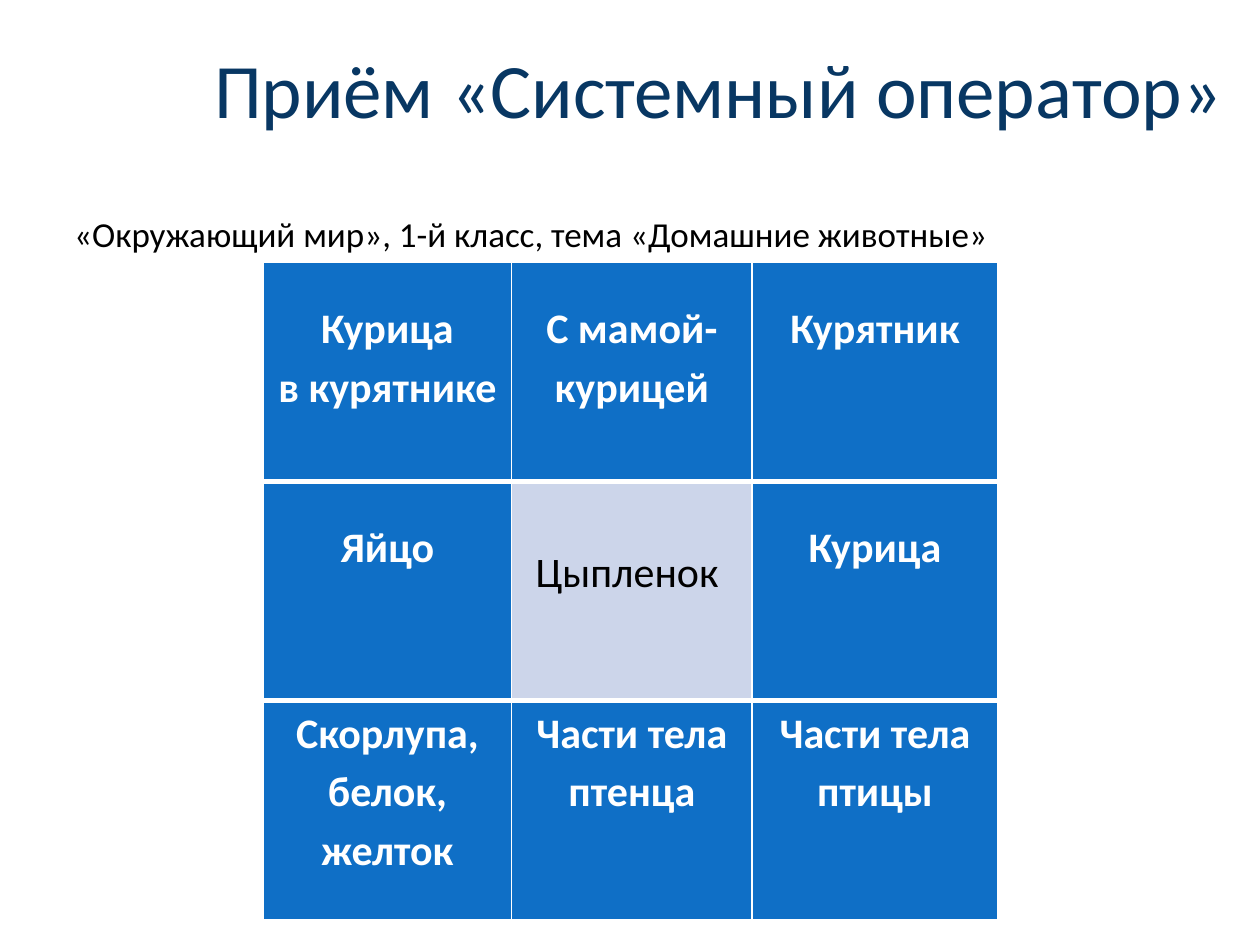
import pptx
import pptx.dml.color
import pptx.enum.text
import pptx.oxml.ns
import pptx.util
from dataclasses import dataclass
from lxml import etree
from pptx.util import Inches


@dataclass(frozen=True)
class Theme:
    font: str = "Calibri"
    title_color: str = "083763"
    text_color: str = "000000"
    cell_text: str = "FFFFFF"
    cell_fill: str = "0F6FC6"
    center_fill: str = "CCD5EA"
    border: str = "FFFFFF"
    title_size: int = 44
    subtitle_size: int = 20
    cell_size: int = 24
    thin: int = 1
    thick: int = 3


THEME = Theme()
TITLE = "Приём «Системный оператор»"
SUBTITLE = "«Окружающий мир», 1-й класс, тема «Домашние животные»"
OPERATOR_GRID = [
    [["Курица", "в курятнике"], ["С мамой-", "курицей"], ["Курятник"]],
    [["Яйцо"], ["Цыпленок "], ["Курица"]],
    [["Скорлупа,", "белок, желток"], ["Части тела птенца"], ["Части тела", "птицы"]],
]
CENTER = (1, 1)
COLUMN_WIDTHS = [1.97, 1.91, 1.95]
ROW_HEIGHT = 1.74
TOP_MARGINS = [0.27, 0.27, 0]
CENTER_TOP_MARGIN = 0.47


def add_run(paragraph, text, size, color, bold=False):
    run = paragraph.add_run()
    run.text = text
    run.font.name = THEME.font
    run.font.size = pptx.util.Pt(size)
    run.font.bold = bold
    run.font.color.rgb = pptx.dml.color.RGBColor.from_string(color)


def add_text_box(slide, position, text, size, color, wrap):
    shape = slide.shapes.add_textbox(*map(Inches, position))
    shape.text_frame.word_wrap = wrap
    shape.text_frame.auto_size = pptx.enum.text.MSO_AUTO_SIZE.SHAPE_TO_FIT_TEXT
    add_run(shape.text_frame.paragraphs[0], text, size, color)


def set_borders(cell, row, last_row):
    qn = pptx.oxml.ns.qn
    properties = cell._tc.get_or_add_tcPr()
    widths = {
        "lnL": THEME.thin,
        "lnR": THEME.thin,
        "lnT": THEME.thick if row > 0 else THEME.thin,
        "lnB": THEME.thick if row < last_row else THEME.thin,
    }
    for tag, width in widths.items():
        line = etree.SubElement(properties, qn(f"a:{tag}"), w=str(pptx.util.Pt(width)))
        fill = etree.SubElement(line, qn("a:solidFill"))
        etree.SubElement(fill, qn("a:srgbClr"), val=THEME.border)


def fill_cell(cell, row, column, lines):
    is_center = (row, column) == CENTER
    set_borders(cell, row, len(OPERATOR_GRID) - 1)
    cell.fill.solid()
    cell.fill.fore_color.rgb = pptx.dml.color.RGBColor.from_string(
        THEME.center_fill if is_center else THEME.cell_fill
    )
    cell.margin_left = cell.margin_right = Inches(0.07)
    cell.margin_top = Inches(CENTER_TOP_MARGIN if is_center else TOP_MARGINS[row])
    cell.margin_bottom = 0
    for index, text in enumerate(lines):
        frame = cell.text_frame
        paragraph = frame.add_paragraph() if index else frame.paragraphs[0]
        paragraph.alignment = pptx.enum.text.PP_ALIGN.CENTER
        paragraph.line_spacing = 1.15
        color = THEME.text_color if is_center else THEME.cell_text
        add_run(paragraph, text, THEME.cell_size, color, bold=not is_center)


def add_operator_table(slide):
    rows, columns = len(OPERATOR_GRID), len(COLUMN_WIDTHS)
    table = slide.shapes.add_table(
        rows, columns, Inches(2.09), Inches(2.08),
        Inches(sum(COLUMN_WIDTHS)), Inches(ROW_HEIGHT * rows),
    ).table
    table.first_row = False
    table.horz_banding = False
    for column, width in zip(table.columns, COLUMN_WIDTHS):
        column.width = Inches(width)
    for row, cells in enumerate(OPERATOR_GRID):
        table.rows[row].height = Inches(ROW_HEIGHT)
        for column, lines in enumerate(cells):
            fill_cell(table.cell(row, column), row, column, lines)


def main():
    presentation = pptx.Presentation()
    presentation.slide_width = Inches(10)
    presentation.slide_height = Inches(7.5)
    slide = presentation.slides.add_slide(presentation.slide_layouts[6])
    add_text_box(slide, (1.6, 0.28, 8.49, 0.84), TITLE,
                 THEME.title_size, THEME.title_color, wrap=False)
    add_text_box(slide, (0.49, 1.64, 8.58, 0.44), SUBTITLE,
                 THEME.subtitle_size, THEME.text_color, wrap=True)
    add_operator_table(slide)
    presentation.save("out.pptx")


if __name__ == "__main__":
    main()
